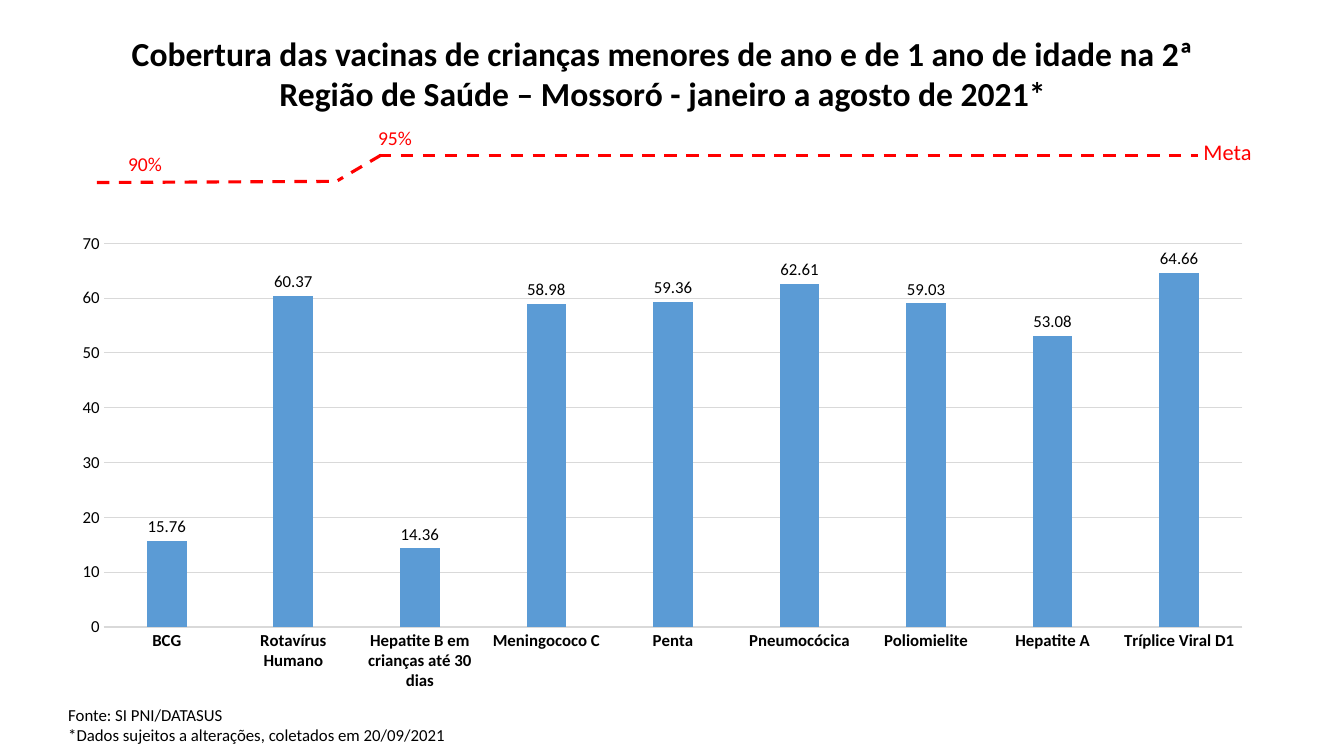
from pptx import Presentation
from pptx.chart.data import CategoryChartData
from pptx.dml.color import RGBColor
from pptx.enum.chart import XL_CHART_TYPE, XL_LABEL_POSITION, XL_TICK_MARK
from pptx.enum.dml import MSO_LINE
from pptx.enum.shapes import MSO_CONNECTOR
from pptx.enum.text import MSO_ANCHOR, PP_ALIGN
from pptx.oxml.ns import qn
from pptx.util import Cm, Pt
from lxml import etree

COLUMNS = XL_CHART_TYPE.COLUMN_CLUSTERED
OUTSIDE = XL_LABEL_POSITION.OUTSIDE_END
NO_TICK = XL_TICK_MARK.NONE
DASH = MSO_LINE.DASH
STRAIGHT = MSO_CONNECTOR.STRAIGHT
TOP = MSO_ANCHOR.TOP
LEFT, CENTER = PP_ALIGN.LEFT, PP_ALIGN.CENTER

BLACK, RED, BLUE, GRAY = "000000", "FF0000", "5B9BD5", "D9D9D9"


def color(value):
    return RGBColor.from_string(value)


def style(font, size, value=BLACK, bold=False):
    font.name = "Calibri"
    font.size = Pt(size)
    font.bold = bold
    font.color.rgb = color(value)


deck = Presentation()
deck.slide_width, deck.slide_height = Cm(33.87), Cm(19.05)
page = deck.slides.add_slide(deck.slide_layouts[5])

# Title
title = page.shapes.title
title.left, title.top, title.width, title.height = Cm(1.93), Cm(0.69), Cm(29.54), Cm(2.31)
title.text_frame.text = (
    "Cobertura das vacinas de crianças menores de ano e de 1 ano de idade na 2ª "
    "Região de Saúde – Mossoró - janeiro a agosto de 2021*"
)
title.text_frame.vertical_anchor = TOP
title.text_frame.word_wrap = True
title_para = title.text_frame.paragraphs[0]
title_para.alignment = CENTER
style(title_para.font, 24, bold=True)

# Coverage chart
coverage = {
    "BCG": 15.76,
    "Rotavírus Humano": 60.37,
    "Hepatite B em crianças até 30 dias": 14.36,
    "Meningococo C": 58.98,
    "Penta": 59.36,
    "Pneumocócica": 62.61,
    "Poliomielite": 59.03,
    "Hepatite A": 53.08,
    "Tríplice Viral D1": 64.66,
}
data = CategoryChartData()
data.categories = list(coverage)
data.add_series("Series 1", list(coverage.values()))
chart = page.shapes.add_chart(
    COLUMNS, Cm(1.47), Cm(5.64), Cm(30.45), Cm(12.01), data
).chart
chart.has_title = False
chart.has_legend = False
style(chart.font, 12)

plot = chart.plots[0]
plot.gap_width, plot.overlap = 219, -27
plot.vary_by_categories = False
bars = plot.series[0]
bars.format.fill.solid()
bars.format.fill.fore_color.rgb = color(BLUE)
plot.has_data_labels = True
labels = plot.data_labels
labels.show_value = True
labels.position = OUTSIDE
style(labels.font, 12)

# Axes
vaccines, percent = chart.category_axis, chart.value_axis
for axis in (vaccines, percent):
    axis.major_tick_mark = axis.minor_tick_mark = NO_TICK
    style(axis.tick_labels.font, 12, bold=axis is vaccines)
percent.minimum_scale, percent.maximum_scale, percent.major_unit = 0, 70, 10
percent.format.line.fill.background()
percent.has_major_gridlines = True
for line in (vaccines.format.line, percent.major_gridlines.format.line):
    line.color.rgb = color(GRAY)
    line.width = Pt(0.75)

# Dashed target line: 90% step, rise, 95% step
for x1, y1, x2, y2 in (
    (2.44, 4.6, 8.46, 4.57),
    (9.6, 3.91, 8.51, 4.55),
    (9.55, 3.91, 30.2, 3.91),
):
    target = page.shapes.add_connector(STRAIGHT, Cm(x1), Cm(y1), Cm(x2), Cm(y2))
    target.line.color.rgb = color(RED)
    target.line.width = Pt(2.25)
    target.line.dash_style = DASH
    etree.SubElement(target._element.spPr, qn("a:effectLst"))

# Target labels and source note
note = "Fonte: SI PNI/DATASUS\n*Dados sujeitos a alterações, coletados em 20/09/2021"
for text, left, top, width, height, size, value, align in (
    ("Meta", 30.07, 3.35, 1.73, 0.94, 16, RED, CENTER),
    ("90%", 2.97, 3.71, 1.37, 0.86, 14, RED, CENTER),
    ("95%", 9.27, 3.05, 1.37, 0.86, 14, RED, CENTER),
    (note, 1.47, 17.63, 17.68, 1.27, 12, BLACK, LEFT),
):
    box = page.shapes.add_textbox(Cm(left), Cm(top), Cm(width), Cm(height))
    box.text_frame.word_wrap = text == note
    box.text_frame.text = text
    for para in box.text_frame.paragraphs:
        para.alignment = align
        style(para.font, size, value)

deck.save("out.pptx")
